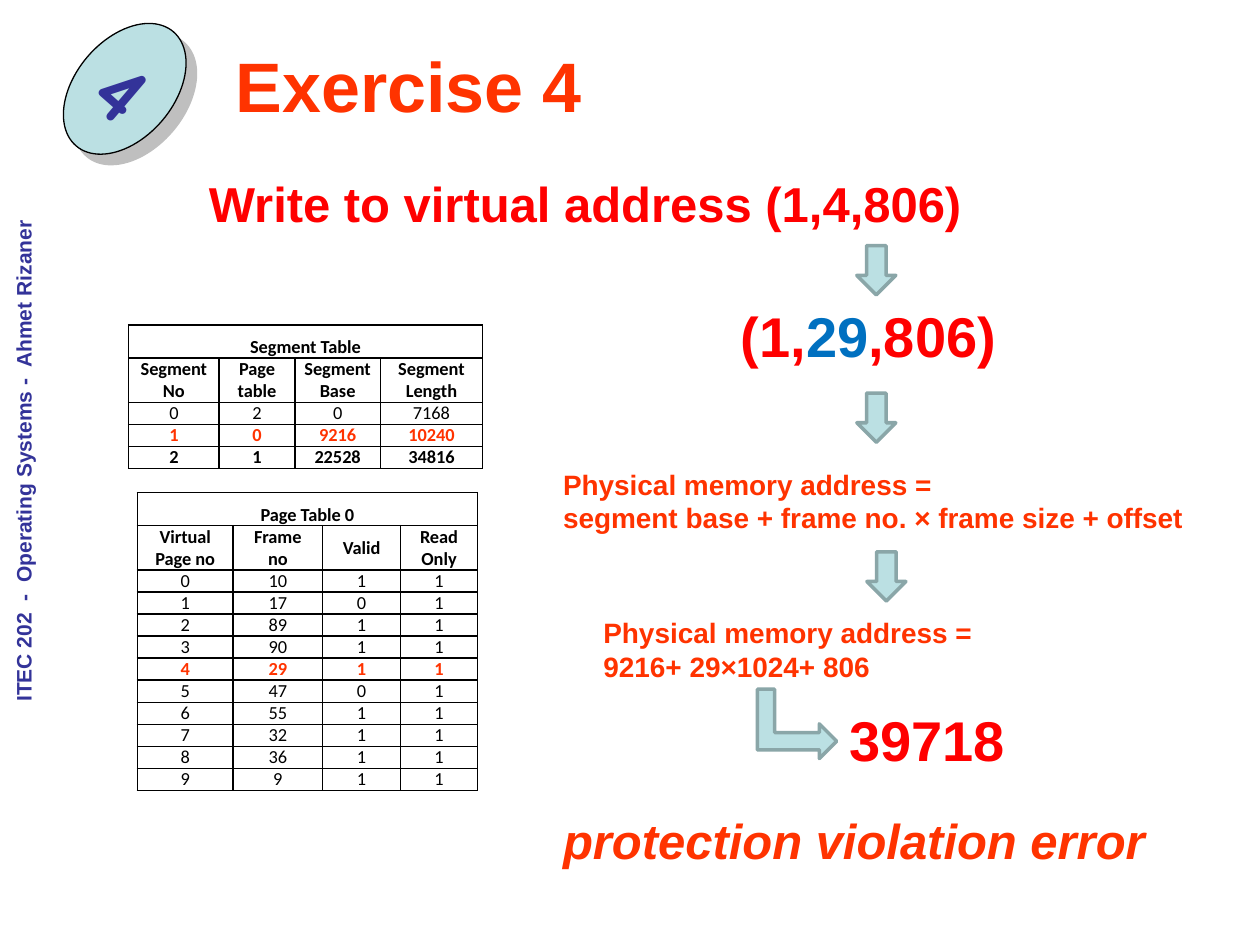
import pptx
import pptx.util
import pptx.dml.color
import pptx.enum.shapes
import pptx.enum.text
import pptx.oxml
import pptx.oxml.ns
from dataclasses import dataclass

Inches = pptx.util.Inches
Pt = pptx.util.Pt
SHAPES = pptx.enum.shapes.MSO_SHAPE
ALIGN = pptx.enum.text.PP_ALIGN
ANCHOR = pptx.enum.text.MSO_ANCHOR


@dataclass(frozen=True)
class Theme:
    orange: str = "FF3300"
    red: str = "FF0000"
    blue: str = "0070C0"
    navy: str = "333399"
    black: str = "000000"
    pale: str = "BBE0E3"
    arrow_line: str = "8AA6A8"
    font: str = "Arial"
    table_font: str = "Calibri"
    badge_font: str = "Comic Neue"
    title: float = 40
    badge: float = 48
    result: float = 32
    question: float = 28
    step: float = 16
    footer: float = 12
    table: float = 10.5


THEME = Theme()

# Content: place, size, paragraphs of (text, colour) runs, options
TEXTS = [
    ((-3.11, 3.51, 6.59, 0.3), THEME.footer,
     [[("ITEC 202  -  Operating Systems -  Ahmet Rizaner", THEME.navy)]],
     {"align": ALIGN.CENTER, "rotation": 270}),
    ((0.86, 0.39, 4.77, 0.56), THEME.title, [[("Exercise 4", THEME.orange)]],
     {"align": ALIGN.CENTER, "anchor": ANCHOR.MIDDLE, "grow": False}),
    ((1.56, 1.33, 6.25, 0.57), THEME.question,
     [[("Write to virtual address (1,4,806)", THEME.red)]], {"wrap": False}),
    ((5.78, 2.34, 2.27, 0.64), THEME.result,
     [[("(1,", THEME.red), ("29", THEME.blue), (",806)", THEME.red)]], {}),
    ((4.37, 3.66, 5.31, 0.64), THEME.step,
     [[("Physical memory address =", THEME.orange)],
      [("segment base + frame no. × frame size + offset", THEME.orange)]], {}),
    ((4.69, 4.84, 3.59, 0.64), THEME.step,
     [[("Physical memory address =", THEME.orange)],
      [("9216+ 29×1024+ 806", THEME.orange)]], {}),
    ((6.64, 5.55, 1.56, 0.64), THEME.result, [[("39718", THEME.red)]], {}),
    ((4.37, 6.38, 5.08, 0.57), THEME.question,
     [[("protection violation error", THEME.orange)]], {"italic": True}),
]

ARROWS = [
    (SHAPES.DOWN_ARROW, (6.8, 1.95, 0.31, 0.39), 0),
    (SHAPES.DOWN_ARROW, (6.8, 3.12, 0.31, 0.39), 0),
    (SHAPES.DOWN_ARROW, (6.88, 4.38, 0.31, 0.39), 0),
    (SHAPES.BENT_UP_ARROW, (6.05, 5.43, 0.55, 0.63), 90),
]

PAGE_FRAMES = [10, 17, 89, 90, 29, 47, 55, 32, 36, 9]
INVALID_PAGES = {1, 5}

SEGMENT_TABLE = {
    "at": (1.02, 2.58), "columns": [0.72, 0.6, 0.68, 0.81],
    "title": "Segment Table",
    "headers": ["Segment\nNo", "Page table", "Segment\nBase", "Segment\nLength"],
    "rows": [[0, 2, 0, 7168], [1, 0, 9216, 10240], [2, 1, 22528, 34816]],
    "highlight": 1, "bold": {1, 2},
    "header_anchor": ANCHOR.TOP, "empty_last_row": False,
}
PAGE_TABLE = {
    "at": (1.09, 3.91), "columns": [0.76, 0.71, 0.62, 0.61],
    "title": "Page Table 0",
    "headers": ["Virtual\nPage no", "Frame\nno", "Valid", "Read\nOnly"],
    "rows": [[page, frame, 0 if page in INVALID_PAGES else 1, 1]
             for page, frame in enumerate(PAGE_FRAMES)],
    "highlight": 4, "bold": {4},
    "header_anchor": ANCHOR.MIDDLE, "empty_last_row": True,
}
TITLE_HEIGHT, HEADER_HEIGHT, ROW_HEIGHT = 0.26, 0.35, 0.17


def rgb(value):
    return pptx.dml.color.RGBColor.from_string(value)


def add_run(paragraph, text, size, color, font=THEME.font, bold=True, italic=False):
    run = paragraph.add_run()
    run.text = text
    run.font.name = font
    run.font.size = Pt(size)
    run.font.bold = bold
    run.font.italic = italic
    run.font.color.rgb = rgb(color)


def add_text(slide, place, size, paragraphs, align=ALIGN.LEFT, anchor=ANCHOR.TOP,
             rotation=0, wrap=True, grow=True, italic=False):
    box = slide.shapes.add_textbox(*map(Inches, place))
    box.rotation = rotation
    frame = box.text_frame
    frame.word_wrap = wrap
    frame.vertical_anchor = anchor
    if grow:
        frame.auto_size = pptx.enum.text.MSO_AUTO_SIZE.SHAPE_TO_FIT_TEXT
    for index, runs in enumerate(paragraphs):
        paragraph = frame.add_paragraph() if index else frame.paragraphs[0]
        paragraph.alignment = align
        for text, color in runs:
            add_run(paragraph, text, size, color, italic=italic)


def add_filled_shape(slide, kind, place, rotation, line_color, line_width):
    shape = slide.shapes.add_shape(kind, *map(Inches, place))
    shape.rotation = rotation
    shape.shadow.inherit = False
    shape.fill.solid()
    shape.fill.fore_color.rgb = rgb(THEME.pale)
    shape.line.color.rgb = rgb(line_color)
    shape.line.width = Pt(line_width)
    return shape


def add_badge(slide):
    badge = add_filled_shape(slide, SHAPES.OVAL, (0.6, 0.11, 0.78, 1.19), 40.4,
                             THEME.black, 0.75)
    effects = badge._element.spPr.find(pptx.oxml.ns.qn("a:effectLst"))
    effects.append(pptx.oxml.parse_xml(
        f'<a:outerShdw {pptx.oxml.ns.nsdecls("a")} dist="{Pt(8.5)}" dir="2700000" '
        'algn="ctr" rotWithShape="0"><a:srgbClr val="808080">'
        '<a:alpha val="50000"/></a:srgbClr></a:outerShdw>'))
    frame = badge.text_frame
    frame.word_wrap = False
    frame.vertical_anchor = ANCHOR.MIDDLE
    frame.paragraphs[0].alignment = ALIGN.CENTER
    add_run(frame.paragraphs[0], "4", THEME.badge, THEME.navy, THEME.badge_font)


def set_borders(cell, sides):
    properties = cell._tc.get_or_add_tcPr()
    for side in "LRTB":
        paint = (f'<a:solidFill><a:srgbClr val="{THEME.black}"/></a:solidFill>'
                 if side in sides else "<a:noFill/>")
        properties.append(pptx.oxml.parse_xml(
            f'<a:ln{side} {pptx.oxml.ns.nsdecls("a")} w="{Pt(1)}">{paint}</a:ln{side}>'))


def fill_cell(cell, text, color=THEME.black, bold=True, anchor=ANCHOR.TOP,
              spacing=1.0, borders="LRTB"):
    set_borders(cell, borders)
    cell.fill.background()
    cell.margin_left = cell.margin_right = Inches(0.07)
    cell.margin_top = cell.margin_bottom = 0
    cell.vertical_anchor = anchor
    for index, line in enumerate(text.split("\n")):
        frame = cell.text_frame
        paragraph = frame.add_paragraph() if index else frame.paragraphs[0]
        paragraph.alignment = ALIGN.CENTER
        paragraph.line_spacing = spacing
        if line:
            add_run(paragraph, line, THEME.table, color, THEME.table_font, bold)
        else:
            paragraph.font.size = Pt(THEME.table)


def add_memory_table(slide, data):
    heights = [TITLE_HEIGHT, HEADER_HEIGHT] + [ROW_HEIGHT] * len(data["rows"])
    if data["empty_last_row"]:
        heights.append(ROW_HEIGHT)
    columns = data["columns"]
    size = (sum(columns), sum(heights))
    table = slide.shapes.add_table(len(heights), len(columns),
                                   *map(Inches, data["at"] + size)).table
    table.first_row = table.horz_banding = False
    for column, width in zip(table.columns, columns):
        column.width = Inches(width)
    for row, height in zip(table.rows, heights):
        row.height = Inches(height)

    # Title across all columns, then headers
    table.cell(0, 0).merge(table.cell(0, len(columns) - 1))
    for index, header in enumerate(data["headers"]):
        fill_cell(table.cell(0, index), "" if index else data["title"], spacing=1.5)
        fill_cell(table.cell(1, index), header, anchor=data["header_anchor"])

    # Values
    for number, values in enumerate(data["rows"]):
        color = THEME.orange if number == data["highlight"] else THEME.black
        for index, value in enumerate(values):
            fill_cell(table.cell(number + 2, index), str(value), color,
                      number in data["bold"])
    if data["empty_last_row"]:
        for cell in table.rows[len(heights) - 1].cells:
            fill_cell(cell, "", borders="T")


def main():
    presentation = pptx.Presentation()
    presentation.slide_width, presentation.slide_height = Inches(10), Inches(7.5)
    slide = presentation.slides.add_slide(presentation.slide_layouts[6])
    add_badge(slide)
    for place, size, paragraphs, options in TEXTS:
        add_text(slide, place, size, paragraphs, **options)
    for data in (SEGMENT_TABLE, PAGE_TABLE):
        add_memory_table(slide, data)
    for kind, place, rotation in ARROWS:
        add_filled_shape(slide, kind, place, rotation, THEME.arrow_line, 2)
    presentation.save("out.pptx")


if __name__ == "__main__":
    main()
